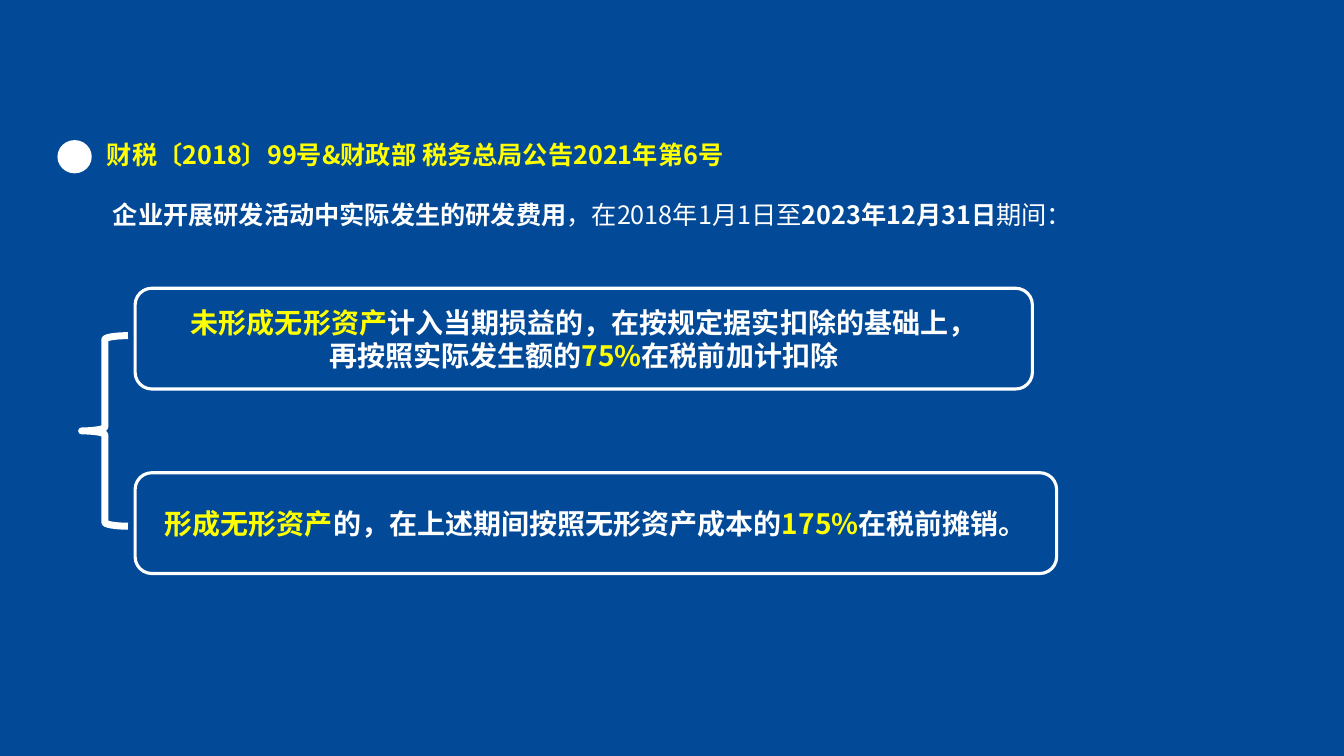
from lxml import etree
from pptx import Presentation
from pptx.dml.color import RGBColor
from pptx.enum.shapes import MSO_SHAPE
from pptx.enum.text import MSO_ANCHOR, MSO_AUTO_SIZE, PP_ALIGN
from pptx.oxml.ns import qn
from pptx.util import Inches, Pt

ROUNDED_BOX = MSO_SHAPE.FLOWCHART_ALTERNATE_PROCESS
BRACE = MSO_SHAPE.LEFT_BRACE
DOT = MSO_SHAPE.OVAL
TOP, MIDDLE = MSO_ANCHOR.TOP, MSO_ANCHOR.MIDDLE
LEFT, CENTER = PP_ALIGN.LEFT, PP_ALIGN.CENTER

FONT = "Noto Sans CJK SC"
COLORS = {"background": "024997", "text": "FFFFFF", "key": "FFFF00"}


def color(name):
    return RGBColor.from_string(COLORS[name])


def add_runs(paragraph, runs, size):
    """Each run is (text, colour name, bold)."""
    for text, color_name, bold in runs:
        run = paragraph.add_run()
        run.text = text
        font = run.font
        font.name, font.size, font.bold = FONT, Pt(size), bold
        font.color.rgb = color(color_name)
        east_asian = etree.SubElement(run._r.get_or_add_rPr(), qn("a:ea"))
        east_asian.set("typeface", FONT)


def fill_placeholder(placeholder, box, runs, first_indent=0):
    placeholder.left, placeholder.top, placeholder.width, placeholder.height = (
        Inches(length) for length in box)
    frame = placeholder.text_frame
    frame.word_wrap = True
    frame.auto_size = MSO_AUTO_SIZE.NONE
    frame.vertical_anchor = TOP
    paragraph = frame.paragraphs[0]
    properties = paragraph._p.get_or_add_pPr()
    properties.set("marL", "0")
    properties.set("indent", str(Inches(first_indent)))
    etree.SubElement(properties, qn("a:buNone"))
    paragraph.alignment = LEFT
    paragraph.space_before = Pt(0)
    add_runs(paragraph, runs, 18)


def add_plain_shape(slide, kind, box, line_width=None, fill=None):
    shape = slide.shapes.add_shape(kind, *(Inches(length) for length in box))
    shape.shadow.inherit = False
    if fill:
        shape.fill.solid()
        shape.fill.fore_color.rgb = color(fill)
    else:
        shape.fill.background()
    if line_width:
        shape.line.color.rgb = color("text")
        shape.line.width = Pt(line_width)
    else:
        shape.line.fill.background()
    return shape


def add_policy(slide, left, top, width):
    """Notice number with its dot, and the period it covers."""
    add_plain_shape(slide, DOT, (left, top + 0.06, 0.34, 0.33), fill="text")
    text_left, text_width = left + 0.39, width - 0.39
    fill_placeholder(slide.shapes.title, (text_left, top, text_width, 0.4), [
        ("财税〔2018〕99号&财政部 税务总局公告2021年第6号", "key", True)])
    fill_placeholder(slide.placeholders[1], (text_left, top + 0.6, text_width, 0.7), [
        ("企业开展研发活动中实际发生的研发费用", "text", True),
        ("，在2018年1月1日至", "text", False),
        ("2023年12月31日", "text", True),
        ("期间：", "text", False)], first_indent=0.06)


def add_case(slide, box, lines):
    case = add_plain_shape(slide, ROUNDED_BOX, box, line_width=2.25)
    frame = case.text_frame
    frame.word_wrap = False
    frame.vertical_anchor = MIDDLE
    for index, runs in enumerate(lines):
        paragraph = frame.add_paragraph() if index else frame.paragraphs[0]
        paragraph.alignment = CENTER
        add_runs(paragraph, runs, 20)


def add_cases(slide, left, top):
    """Two deduction cases joined by a brace."""
    add_plain_shape(slide, BRACE, (left, top + 0.47, 0.46, 1.89), line_width=5)
    case_left = left + 0.53
    add_case(slide, (case_left, top, 8.9, 1), [
        [("未形成无形资产", "key", True),
         ("计入当期损益的，在按规定据实扣除的基础上，", "text", True)],
        [("再按照实际发生额的", "text", True),
         ("75%", "key", True),
         ("在税前加计扣除", "text", True)]])
    add_case(slide, (case_left, top + 1.83, 9.14, 1), [
        [("形成无形资产", "key", True),
         ("的，在上述期间按照无形资产成本的", "text", True),
         ("175%", "key", True),
         ("在税前摊销。", "text", True)]])


def main():
    presentation = Presentation()
    presentation.slide_width = Inches(13.33)
    presentation.slide_height = Inches(7.5)
    slide = presentation.slides.add_slide(presentation.slide_layouts[1])
    slide.background.fill.solid()
    slide.background.fill.fore_color.rgb = color("background")
    add_policy(slide, 0.57, 1.33, 10.34)
    add_cases(slide, 0.81, 2.86)
    presentation.save("out.pptx")


if __name__ == "__main__":
    main()
